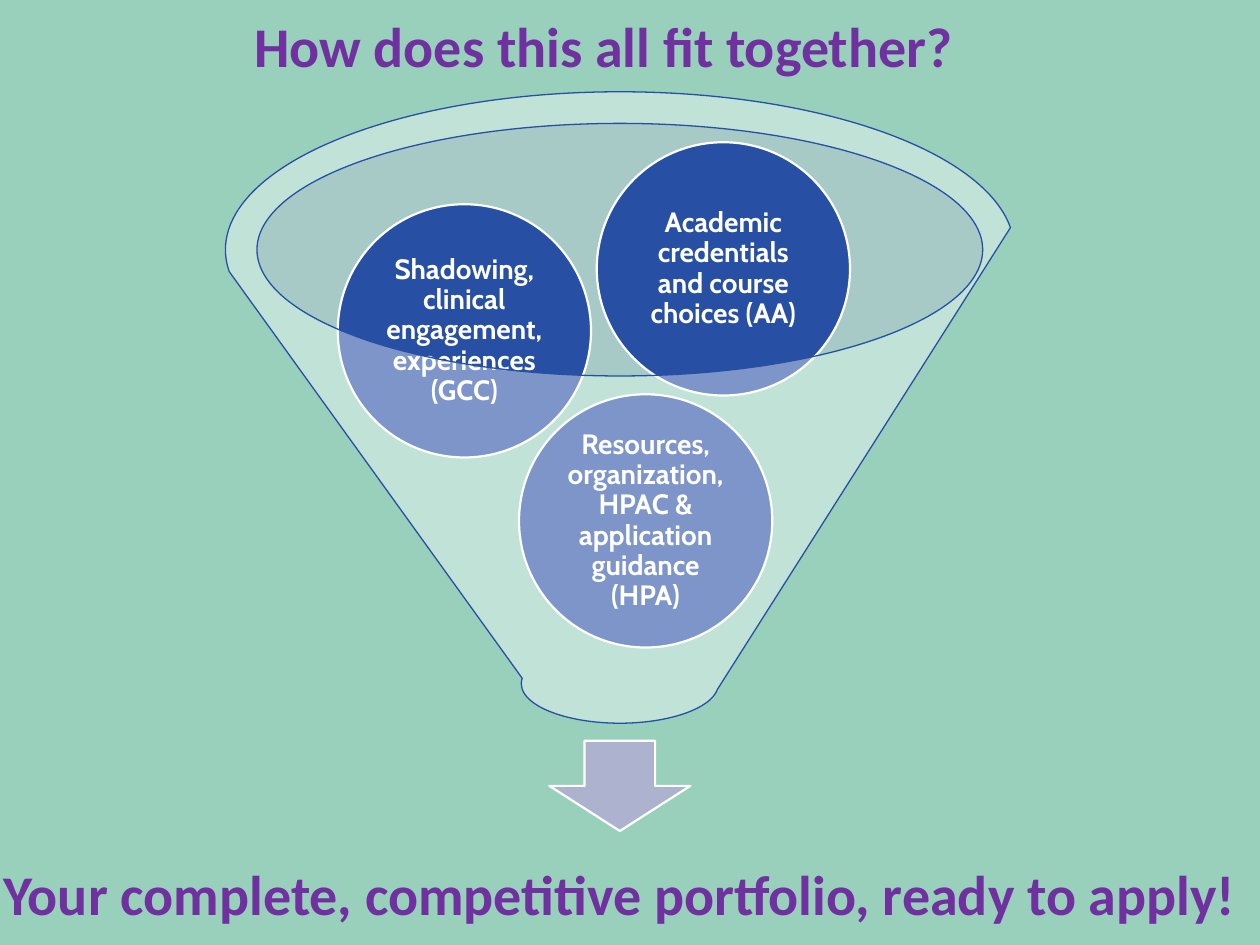
from lxml import etree
from pptx import Presentation
from pptx.dml.color import RGBColor
from pptx.enum.shapes import MSO_SHAPE
from pptx.enum.text import MSO_ANCHOR, PP_ALIGN
from pptx.oxml.ns import qn
from pptx.util import Pt

MINT = RGBColor(0x98, 0xD0, 0xBC)
PURPLE = RGBColor(0x70, 0x30, 0xA0)
BLUE = RGBColor(0x27, 0x4F, 0xA4)
LAVENDER = RGBColor(0xAD, 0xB3, 0xCF)
PALE_LAVENDER = RGBColor(0xBE, 0xC2, 0xD8)
WHITE = RGBColor(0xFF, 0xFF, 0xFF)

CIRCLE_SIZE = 144.7
# Label, left and top within the funnel box
CIRCLES = [
    ("Resources, organization, HPAC & application guidance (HPA)", 167.8, 172.8),
    ("Shadowing, clinical engagement, experiences (GCC)", 64.2, 64.2),
    ("Academic credentials and course choices (AA)", 212.2, 28.8),
]


def set_text(shape, text, font_name, size, color, inset, line_spacing=0.9):
    frame = shape.text_frame
    frame.word_wrap = True
    frame.vertical_anchor = MSO_ANCHOR.MIDDLE
    frame.margin_left = frame.margin_right = Pt(inset)
    frame.margin_top = frame.margin_bottom = Pt(inset)
    frame.text = text
    paragraph = frame.paragraphs[0]
    paragraph.alignment = PP_ALIGN.CENTER
    paragraph.line_spacing = line_spacing
    font = paragraph.runs[0].font
    font.name = font_name
    font.size = Pt(size)
    font.bold = True
    font.color.rgb = color


def add_heading(slide, text, left, top, width, height, inset, line_spacing):
    box = slide.shapes.add_textbox(Pt(left), Pt(top), Pt(width), Pt(height))
    set_text(box, text, "Calibri", 32, PURPLE, inset, line_spacing)


def add_filled_shape(slide, kind, left, top, width, height, fill,
                     line=None, line_width=1.25, opacity=100):
    """Add a preset shape; opacity is a percentage, no line means no outline."""
    shape = slide.shapes.add_shape(kind, Pt(left), Pt(top), Pt(width), Pt(height))
    shape.shadow.inherit = False
    shape.fill.solid()
    shape.fill.fore_color.rgb = fill
    if opacity < 100:
        color = shape.fill._xPr.find(qn("a:solidFill"))[0]
        etree.SubElement(color, qn("a:alpha"), val=str(opacity * 1000))
    if line is None:
        shape.line.fill.background()
    else:
        shape.line.color.rgb = line
        shape.line.width = Pt(line_width)
    return shape


def add_funnel(slide, left, top, width, height):
    """Place the circles behind a translucent funnel, with an arrow below it."""
    add_filled_shape(slide, MSO_SHAPE.OVAL, left + 17.5, top + 17.5,
                     width - 35, 144, PALE_LAVENDER, opacity=40)
    arrow_width, arrow_height = 80.6, 51.6
    add_filled_shape(slide, MSO_SHAPE.DOWN_ARROW,
                     left + (width - arrow_width) / 2, top + height + 10,
                     arrow_width, arrow_height, LAVENDER, WHITE)
    for label, offset_x, offset_y in CIRCLES:
        circle = add_filled_shape(slide, MSO_SHAPE.OVAL,
                                  left + offset_x, top + offset_y,
                                  CIRCLE_SIZE, CIRCLE_SIZE, BLUE, WHITE)
        set_text(circle, label, "Cabin", 16, WHITE, inset=1.5)
    add_filled_shape(slide, MSO_SHAPE.FUNNEL, left, top, width, height,
                     WHITE, BLUE, line_width=0.75, opacity=40)


def main():
    presentation = Presentation()
    presentation.slide_width = Pt(720)
    presentation.slide_height = Pt(540)
    slide = presentation.slides.add_slide(presentation.slide_layouts[6])
    slide.background.fill.solid()
    slide.background.fill.fore_color.rgb = MINT

    add_heading(slide, "How does this all fit together?",
                108, 3, 474, 46, inset=3.6, line_spacing=1)
    add_funnel(slide, 128.8, 52.5, 450.8, 360.8)
    add_heading(slide, "Your complete, competitive portfolio, ready to apply!",
                -21.6, 464.4, 751.7, 96.5, inset=18, line_spacing=0.9)
    presentation.save("out.pptx")


if __name__ == "__main__":
    main()
